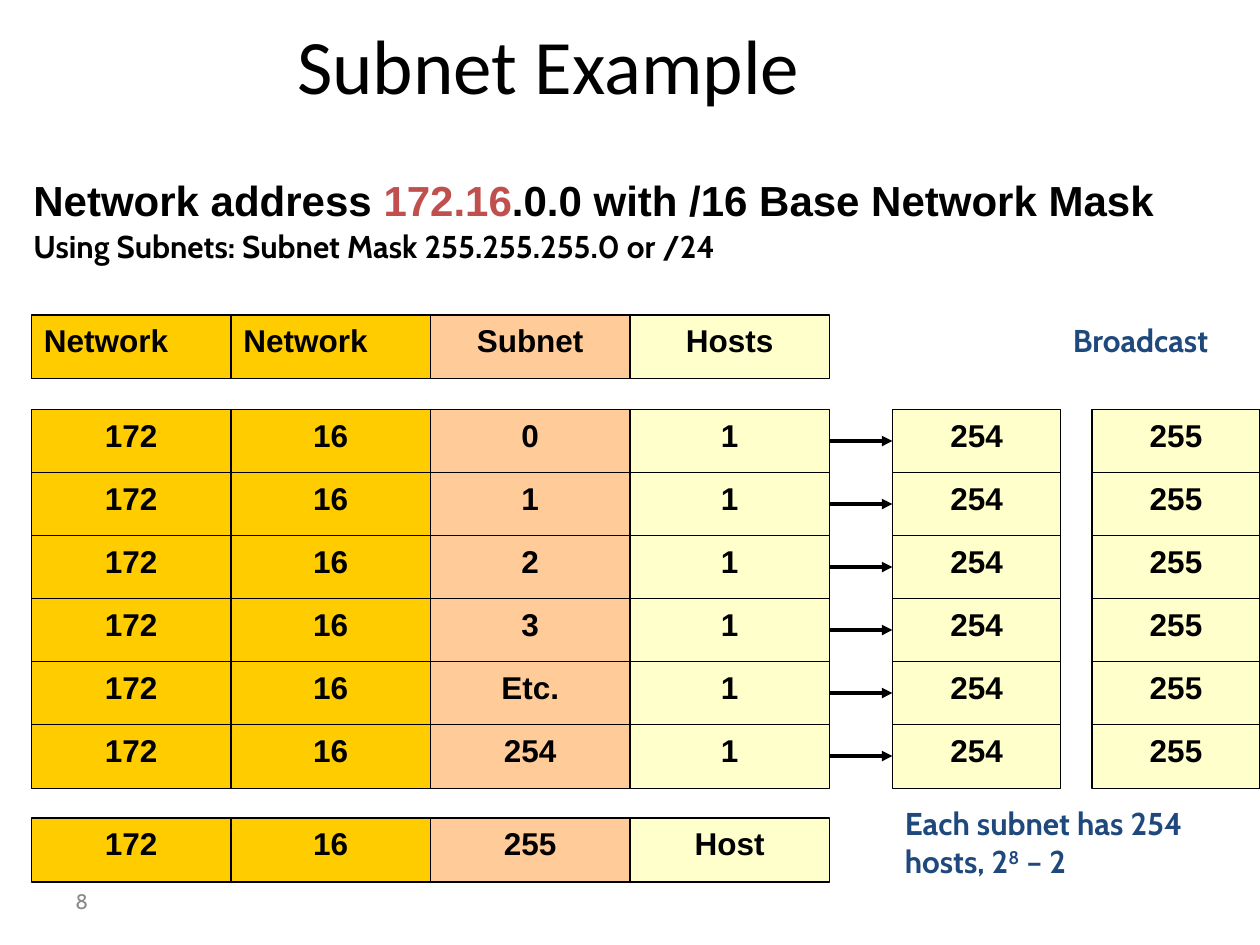
from lxml import etree
from pptx import Presentation
from pptx.dml.color import RGBColor
from pptx.enum import shapes, text
from pptx.oxml import ns
from pptx.util import Pt

COLORS = {"black": "000000", "gold": "FFCC00", "peach": "FFCC99", "cream": "FFFFCC",
          "red": "C0504D", "navy": "1F497D", "gray": "898989"}
LEFT, CENTER = text.PP_ALIGN.LEFT, text.PP_ALIGN.CENTER
TOP, MIDDLE = text.MSO_ANCHOR.TOP, text.MSO_ANCHOR.MIDDLE

HEADER = ["Network", "Network", "Subnet", "Hosts"]
SUBNETS = ["0", "1", "2", "3", "Etc.", "254"]
LAST_ROW = ["172", "16", "255", "Host"]
LAST_HOST, BROADCAST = "254", "255"

# box (left, top, width, height), alignment, anchor, font, size, bold,
# runs (text, colour, superscript)
TEXTS = [
    ((36.5, 17.5, 554, 37.5), CENTER, MIDDLE, "Calibri", 44, False,
     [("Subnet Example", "black", False)]),
    ((12, 96, 660, 42), LEFT, TOP, "Arial", 24, True,
     [("Network address ", "black", False), ("172.16", "red", False),
      (".0.0 with /16 Base Network Mask", "black", False)]),
    ((12, 126, 666, 36), LEFT, TOP, "Cabin", 18, True,
     [("Using Subnets: Subnet Mask 255.255.255.0 or /24", "black", False)]),
    ((606, 180, 114, 29), LEFT, TOP, "Cabin", 18, True,
     [("Broadcast", "navy", False)]),
    ((510, 456, 174, 50.5), LEFT, TOP, "Cabin", 18, True,
     [("Each subnet has 254 hosts, 2", "navy", False), ("8", "navy", True),
      (" – 2", "navy", False)]),
    ((36, 500.5, 168, 29), LEFT, MIDDLE, "Cabin", 12, False,
     [("8", "gray", False)]),
]

COLUMN_FILLS = ["gold", "gold", "peach", "cream"]
TABLE_LEFT, COLUMN_W = 18, 114
HEADER_TOP, BODY_TOP, LAST_TOP = 180, 234, 467.5
ROW_PITCH, CELL_H = 36, 36.5
LAST_HOST_LEFT, BROADCAST_LEFT, SIDE_W = 510, 624, 96


def rgb(name):
    return RGBColor.from_string(COLORS[name])


def write(sp, runs, align, anchor, font, size, bold):
    tf = sp.text_frame
    tf.word_wrap = True
    tf.vertical_anchor = anchor
    p = tf.paragraphs[0]
    p.alignment = align
    for words, color, superscript in runs:
        r = p.add_run()
        r.text = words
        r.font.name, r.font.size, r.font.bold = font, Pt(size), bold
        r.font.color.rgb = rgb(color)
        if superscript:
            r._r.get_or_add_rPr().set("baseline", "30000")


def add_cell(parent, words, left, top, width, fill, align=CENTER):
    sp = parent.shapes.add_shape(shapes.MSO_SHAPE.RECTANGLE,
                                 Pt(left), Pt(top), Pt(width), Pt(CELL_H))
    sp.shadow.inherit = False
    sp.fill.solid()
    sp.fill.fore_color.rgb = rgb(fill)
    sp.line.color.rgb = rgb("black")
    sp.line.width = Pt(0.75)
    write(sp, [(words, "black", False)], align, TOP, "Arial", 18, True)


def add_row(slide, words, top, aligns=(CENTER,) * 4):
    group = slide.shapes.add_group_shape()
    for i, (word, fill, align) in enumerate(zip(words, COLUMN_FILLS, aligns)):
        add_cell(group, word, TABLE_LEFT + i * COLUMN_W, top, COLUMN_W, fill, align)


def add_arrow(slide, x1, x2, y):
    line = slide.shapes.add_connector(shapes.MSO_CONNECTOR.STRAIGHT,
                                      Pt(x1), Pt(y), Pt(x2), Pt(y))
    line.line.color.rgb = rgb("black")
    line.line.width = Pt(2)
    etree.SubElement(line.line._get_or_add_ln(), ns.qn("a:tailEnd"), type="triangle")
    etree.SubElement(line._element.spPr, ns.qn("a:effectLst"))


def main():
    prs = Presentation()
    prs.slide_width, prs.slide_height = Pt(720), Pt(540)
    slide = prs.slides.add_slide(prs.slide_layouts[6])

    add_row(slide, HEADER, HEADER_TOP, (LEFT, LEFT, CENTER, CENTER))
    table_right = TABLE_LEFT + len(HEADER) * COLUMN_W
    for i, subnet in enumerate(SUBNETS):
        top = BODY_TOP + i * ROW_PITCH
        add_row(slide, ["172", "16", subnet, "1"], top)
        add_cell(slide, LAST_HOST, LAST_HOST_LEFT, top, SIDE_W, "cream")
        add_cell(slide, BROADCAST, BROADCAST_LEFT, top, SIDE_W, "cream")
        add_arrow(slide, table_right, LAST_HOST_LEFT, top + ROW_PITCH / 2)
    add_row(slide, LAST_ROW, LAST_TOP)

    for box, align, anchor, font, size, bold, runs in TEXTS:
        sp = slide.shapes.add_textbox(*(Pt(v) for v in box))
        write(sp, runs, align, anchor, font, size, bold)

    prs.save("out.pptx")


if __name__ == "__main__":
    main()
